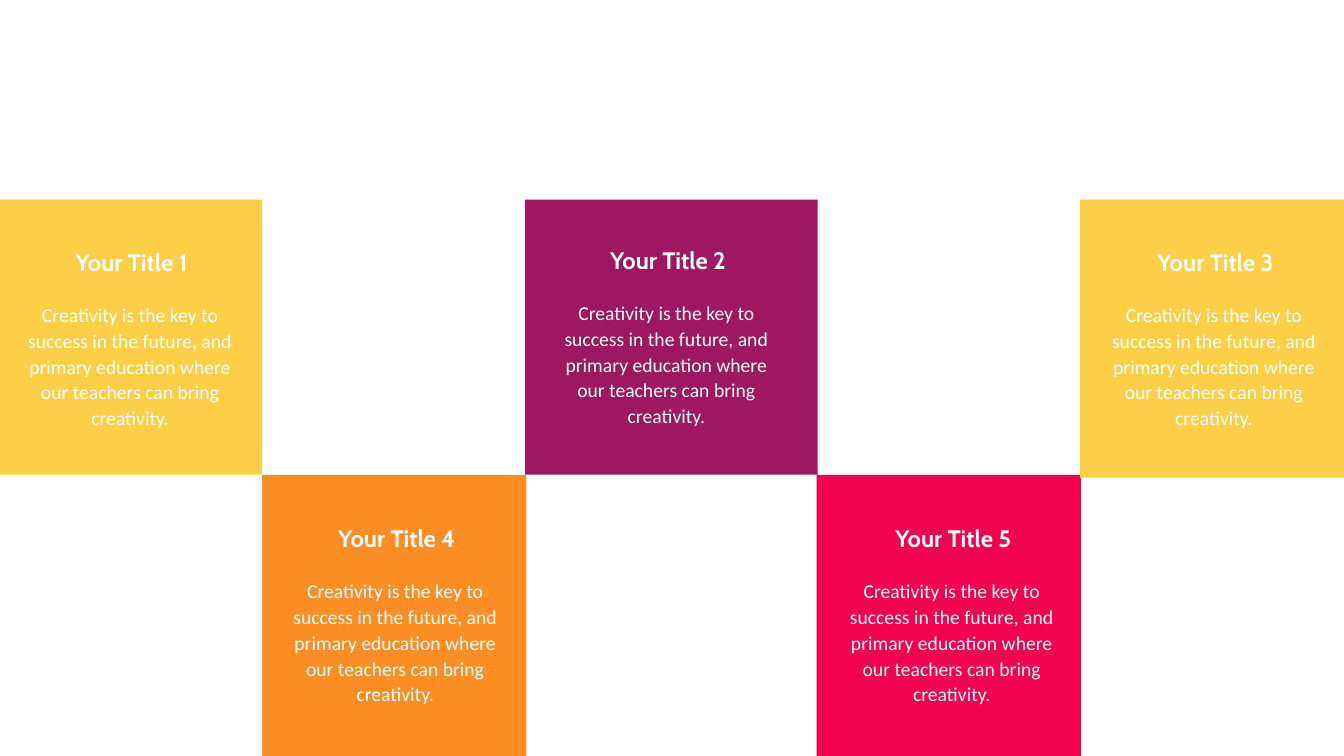
"""Build a slide of five staggered colour tiles, each with a title and a text."""
import dataclasses

import pptx
import pptx.dml.color
import pptx.enum.shapes
import pptx.enum.text
import pptx.presentation
import pptx.slide
import pptx.util

Inches = pptx.util.Inches
RGBColor = pptx.dml.color.RGBColor

YELLOW = RGBColor(0xFB, 0xCF, 0x48)
ORANGE = RGBColor(0xFC, 0x8E, 0x25)
PURPLE = RGBColor(0x9D, 0x18, 0x60)
RED = RGBColor(0xF0, 0x02, 0x50)
WHITE = RGBColor(0xFF, 0xFF, 0xFF)

UPPER_TOP = 1.98
LOWER_TOP = 4.71
BODY_TEXT = (
    "Creativity is the key to success in the future, and primary education "
    "where our teachers can bring creativity."
)


@dataclasses.dataclass(frozen=True)
class Tile:
    number: int
    color: RGBColor
    left: float
    top: float
    width: float
    height: float
    text_left: float
    text_top: float


TILES = [
    Tile(1, YELLOW, 0, UPPER_TOP, 2.6, 2.73, 0.14, 2.4),
    Tile(4, ORANGE, 2.6, LOWER_TOP, 2.62, 2.79, 2.77, 5.14),
    Tile(2, PURPLE, 5.21, UPPER_TOP, 2.9, 2.73, 5.46, 2.38),
    Tile(5, RED, 8.1, LOWER_TOP, 2.62, 2.79, 8.29, 5.14),
    Tile(3, YELLOW, 10.71, UPPER_TOP, 2.62, 2.76, 10.89, 2.4),
]


def add_text(
    slide: pptx.slide.Slide,
    text: str,
    *,
    left: float,
    top: float,
    width: float,
    height: float,
    font: str,
    size: float,
    bold: bool = False,
    line_spacing: float = 1.0,
) -> None:
    box = slide.shapes.add_textbox(
        Inches(left), Inches(top), Inches(width), Inches(height)
    )
    frame = box.text_frame
    frame.word_wrap = True
    frame.auto_size = pptx.enum.text.MSO_AUTO_SIZE.SHAPE_TO_FIT_TEXT
    frame.margin_left = frame.margin_right = Inches(0.12)
    frame.margin_top = frame.margin_bottom = Inches(0.06)
    para = frame.paragraphs[0]
    para.alignment = pptx.enum.text.PP_ALIGN.CENTER
    para.line_spacing = line_spacing
    span = para.add_run()
    span.text = text
    span.font.name = font
    span.font.size = pptx.util.Pt(size)
    span.font.bold = bold
    span.font.color.rgb = WHITE


def add_square(slide: pptx.slide.Slide, tile: Tile) -> None:
    square = slide.shapes.add_shape(
        pptx.enum.shapes.MSO_SHAPE.RECTANGLE,
        Inches(tile.left),
        Inches(tile.top),
        Inches(tile.width),
        Inches(tile.height),
    )
    square.shadow.inherit = False
    square.fill.solid()
    square.fill.fore_color.rgb = tile.color
    square.line.fill.background()


def add_tile_text(slide: pptx.slide.Slide, tile: Tile) -> None:
    add_text(
        slide,
        f"Your Title {tile.number}",
        left=tile.text_left + 0.16,
        top=tile.text_top,
        width=2.01,
        height=0.41,
        font="Cabin",
        size=17,
        bold=True,
    )
    add_text(
        slide,
        BODY_TEXT,
        left=tile.text_left,
        top=tile.text_top + 0.52,
        width=2.3,
        height=1.4,
        font="Calibri",
        size=14,
        line_spacing=1.1,
    )


def main() -> None:
    deck = pptx.Presentation()
    deck.slide_width = Inches(13.33)
    deck.slide_height = Inches(7.5)
    slide = deck.slides.add_slide(deck.slide_layouts[6])
    for tile in TILES:
        add_square(slide, tile)
    for tile in sorted(TILES, key=lambda tile: tile.number):
        add_tile_text(slide, tile)
    deck.save("out.pptx")


if __name__ == "__main__":
    main()
